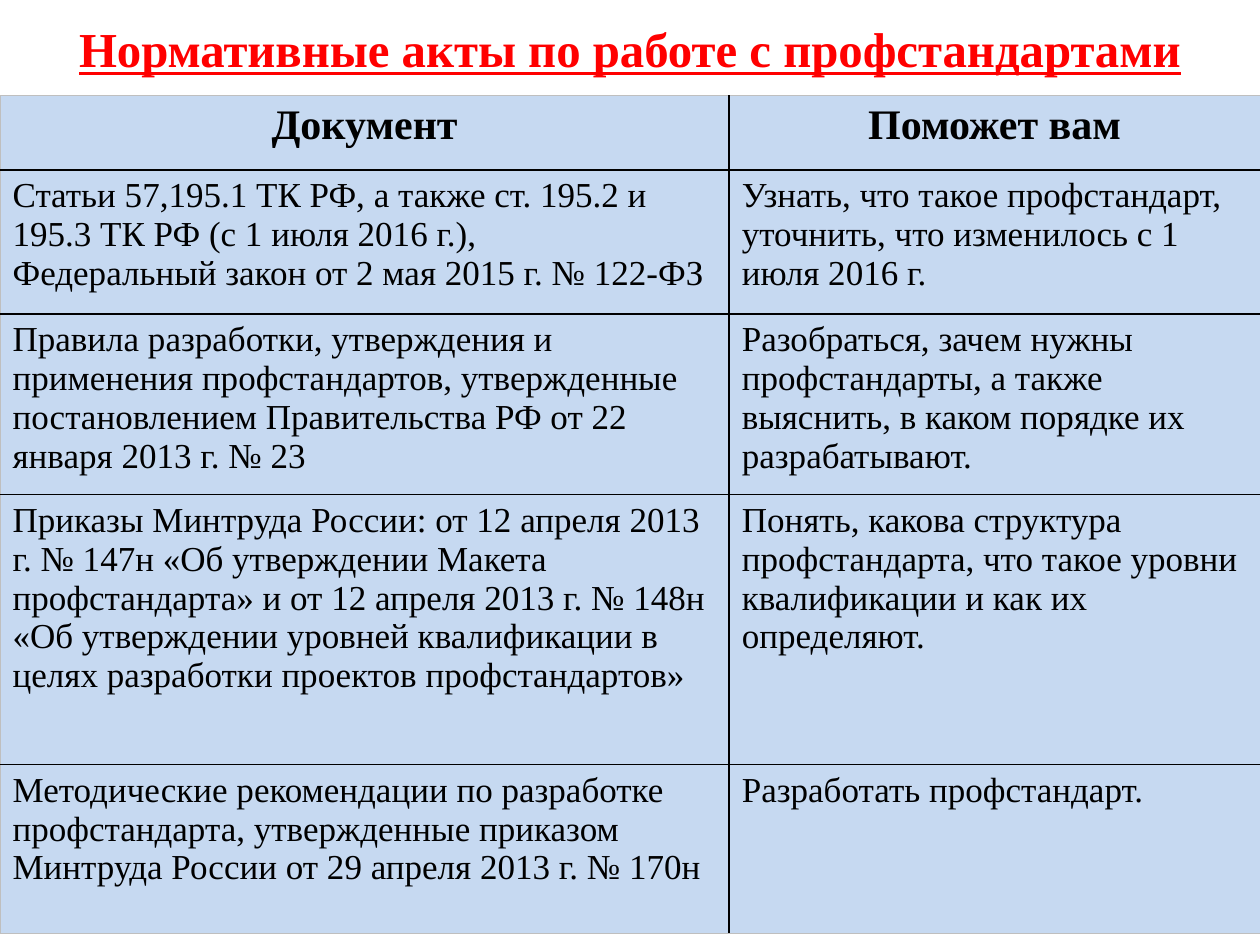
"""Build a slide with a table of regulations on professional standards."""
from lxml.etree import SubElement
from pptx import Presentation
from pptx.dml.color import RGBColor
from pptx.enum.text import MSO_ANCHOR, PP_ALIGN
from pptx.oxml.ns import qn
from pptx.util import Cm, Pt

TITLE = "Нормативные акты по работе с профстандартами"
HEADER = ("Документ", "Поможет вам")
REGULATIONS = [
    (
        "Статьи 57,195.1 ТК РФ, а также ст. 195.2 и 195.3 ТК РФ (с 1 июля 2016 г.),\n"
        "Федеральный закон от 2 мая 2015 г. № 122-ФЗ",
        "Узнать, что такое профстандарт, уточнить, что изменилось с 1 июля 2016 г.",
    ),
    (
        "Правила разработки, утверждения и применения профстандартов, утвержденные "
        "постановлением Правительства РФ от 22 января 2013 г. № 23",
        "Разобраться, зачем нужны профстандарты, а также выяснить, "
        "в каком порядке их разрабатывают.",
    ),
    (
        "Приказы Минтруда России: от 12 апреля 2013 г. № 147н «Об утверждении Макета "
        "профстандарта» и от 12 апреля 2013 г. № 148н «Об утверждении уровней "
        "квалификации в целях разработки проектов профстандартов»",
        "Понять, какова структура профстандарта, что такое уровни квалификации "
        "и как их определяют.",
    ),
    (
        "Методические рекомендации по разработке профстандарта, утвержденные приказом "
        "Минтруда России от 29 апреля 2013 г. № 170н",
        "Разработать профстандарт.",
    ),
]
COLUMN_WIDTHS = (14.7, 10.7)
ROW_HEIGHTS = (1.5, 2.9, 3.63, 5.44, 3.4)

FONT = "Times New Roman"
RED = RGBColor(0xFF, 0x00, 0x00)
BLACK = RGBColor(0x00, 0x00, 0x00)
GRAY = RGBColor(0xBF, 0xBF, 0xBF)
PALE_BLUE = RGBColor(0xC6, 0xD9, 0xF1)


def write(paragraph, words, size, color, bold, centered):
    paragraph.alignment = PP_ALIGN.CENTER if centered else PP_ALIGN.LEFT
    run = paragraph.add_run()
    run.text = words
    run.font.name = FONT
    run.font.size = Pt(size)
    run.font.bold = bold
    run.font.color.rgb = color
    return run


def add_borders(cell, outer_sides):
    properties = cell._tc.get_or_add_tcPr()
    for side, is_outer in outer_sides.items():
        width = Pt(0.5) if is_outer else Pt(1)
        border = SubElement(properties, qn(f"a:ln{side}"), w=str(width))
        fill = SubElement(border, qn("a:solidFill"))
        SubElement(fill, qn("a:srgbClr"), val=str(GRAY if is_outer else BLACK))


def add_title(slide):
    title = slide.shapes.add_textbox(Cm(0), Cm(0), Cm(25.4), Cm(1.95))
    frame = title.text_frame
    frame.word_wrap = True
    frame.vertical_anchor = MSO_ANCHOR.MIDDLE
    run = write(frame.paragraphs[0], TITLE, 27.9, RED, True, True)
    run.font.underline = True


def add_regulations(slide):
    rows = [HEADER, *REGULATIONS]
    last_row, last_column = len(rows) - 1, len(HEADER) - 1
    table = slide.shapes.add_table(
        len(rows), len(HEADER), Cm(0), Cm(1.93),
        Cm(sum(COLUMN_WIDTHS)), Cm(sum(ROW_HEIGHTS)),
    ).table
    for column, width in zip(table.columns, COLUMN_WIDTHS):
        column.width = Cm(width)
    for r, (row, height) in enumerate(zip(rows, ROW_HEIGHTS)):
        table.rows[r].height = Cm(height)
        is_header = r == 0
        for c, content in enumerate(row):
            cell = table.cell(r, c)
            add_borders(cell, {"L": c == 0, "R": c == last_column,
                               "T": is_header, "B": r == last_row})
            cell.fill.solid()
            cell.fill.fore_color.rgb = PALE_BLUE
            frame = cell.text_frame
            for i, words in enumerate(content.split("\n")):
                paragraph = frame.add_paragraph() if i else frame.paragraphs[0]
                write(paragraph, words, 24 if is_header else 20, BLACK, is_header, is_header)


def main():
    presentation = Presentation()
    presentation.slide_width, presentation.slide_height = Cm(25.4), Cm(19.05)
    slide = presentation.slides.add_slide(presentation.slide_layouts[6])
    add_title(slide)
    add_regulations(slide)
    presentation.save("out.pptx")


if __name__ == "__main__":
    main()
